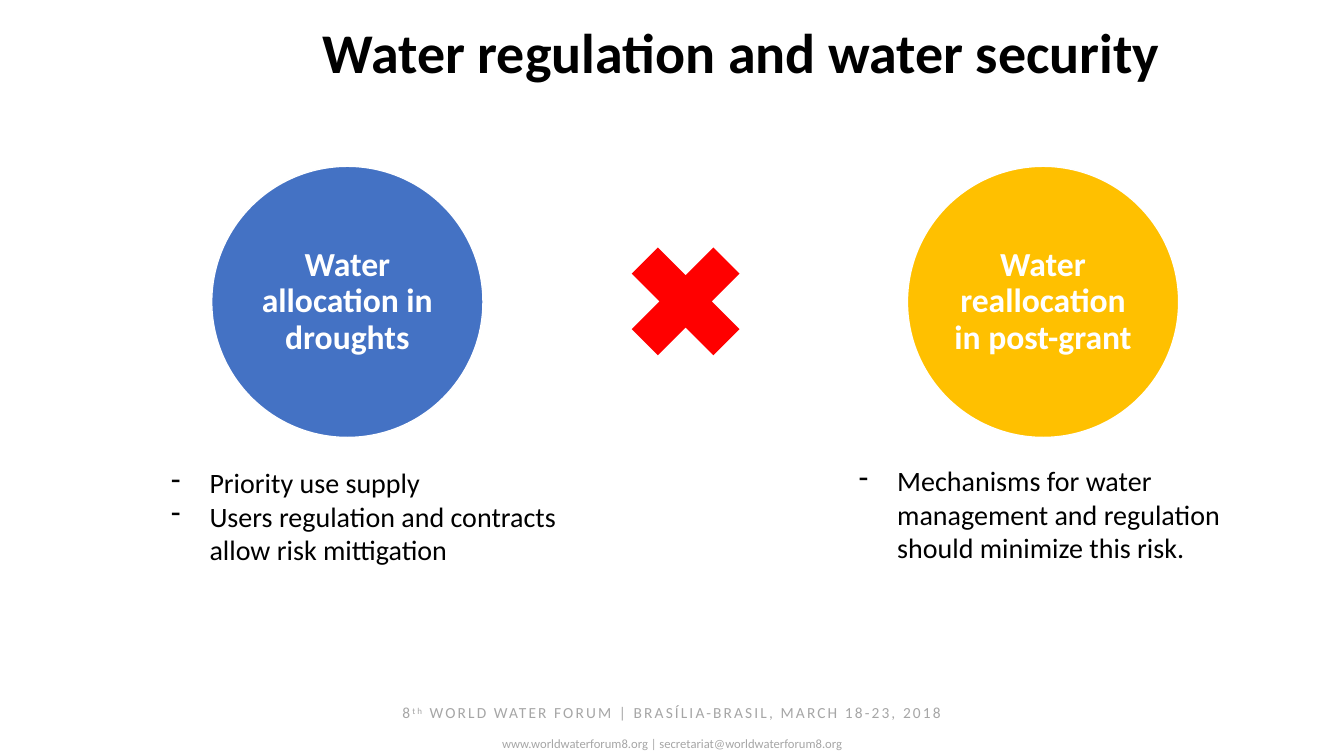
import pptx
import pptx.dml.color
import pptx.enum.shapes
import pptx.enum.text
import pptx.oxml
import pptx.oxml.ns
import pptx.util

EMU_PER_PX = 9144
FONT = "Calibri"
CENTER = pptx.enum.text.PP_ALIGN.CENTER
SHAPES = pptx.enum.shapes.MSO_SHAPE


def px(length):
    return pptx.util.Emu(length * EMU_PER_PX)


def color(hex_code):
    return pptx.dml.color.RGBColor.from_string(hex_code)


def style_runs(paragraph, size, hex_code, bold=False):
    for run in paragraph.runs:
        run.font.name = FONT
        run.font.size = pptx.util.Pt(size)
        run.font.bold = bold
        run.font.color.rgb = color(hex_code)


def add_text_frame(slide, left, top, width, height):
    frame = slide.shapes.add_textbox(px(left), px(top), px(width), px(height)).text_frame
    frame.word_wrap = True
    return frame


def add_filled_shape(slide, kind, left, top, size, fill):
    shape = slide.shapes.add_shape(kind, px(left), px(top), px(size), px(size))
    shape.shadow.inherit = False
    shape.fill.solid()
    shape.fill.fore_color.rgb = color(fill)
    return shape


def add_title(slide, text):
    frame = add_text_frame(slide, 160, 20, 1150, 145)
    frame.text = text
    heading = frame.paragraphs[0]
    heading.alignment = CENTER
    heading.line_spacing = 0.9
    style_runs(heading, 40, "000000", bold=True)


def add_topic_circle(slide, left, fill, text):
    circle = add_filled_shape(slide, SHAPES.OVAL, left, 165, 269, fill)
    circle.line.color.rgb = color("FFFFFF")
    circle.line.width = pptx.util.Pt(1)
    frame = circle.text_frame
    frame.word_wrap = True
    frame.vertical_anchor = pptx.enum.text.MSO_ANCHOR.MIDDLE
    frame.margin_left = frame.margin_right = px(3)
    frame.margin_top = frame.margin_bottom = px(3)
    frame.text = text
    label = frame.paragraphs[0]
    label.alignment = CENTER
    label.line_spacing = 0.9
    style_runs(label, 24, "FFFFFF", bold=True)


def add_cross(slide):
    cross = add_filled_shape(slide, SHAPES.MATH_PLUS, 602, 221, 156, "FF0000")
    cross.line.fill.background()
    cross.rotation = 45


def add_dash_list(slide, left, top, items):
    frame = add_text_frame(slide, left, top, 433, 111)
    frame.text = "\n".join(items)
    for item in frame.paragraphs:
        properties = item._p.get_or_add_pPr()
        properties.set("marL", str(px(38)))
        properties.set("indent", str(-px(38)))
        bullet = pptx.oxml.parse_xml(
            f'<a:buChar {pptx.oxml.ns.nsdecls("a")} char="-"/>')
        properties.append(bullet)
        style_runs(item, 20, "000000")


def add_footer(slide):
    frame = add_text_frame(slide, 0, 693, 1333, 57)
    event = frame.paragraphs[0]
    for text, baseline in (
        ("8", 0),
        ("th", 30000),
        (" WORLD WATER FORUM | BRASÍLIA-BRASIL, MARCH 18-23, 2018", 0),
    ):
        run = event.add_run()
        run.text = text
        properties = run._r.get_or_add_rPr()
        properties.set("spc", "150")
        properties.set("baseline", str(baseline))
    contact = frame.add_paragraph()
    contact.text = "www.worldwaterforum8.org | secretariat@worldwaterforum8.org"
    contact.space_before = pptx.util.Pt(10)
    for line, size in ((event, 11), (contact, 9)):
        line.alignment = CENTER
        style_runs(line, size, "A6A6A6")


def main():
    presentation = pptx.Presentation()
    presentation.slide_width = px(1333)
    presentation.slide_height = px(750)
    slide = presentation.slides.add_slide(presentation.slide_layouts[6])

    add_footer(slide)
    add_title(slide, "Water regulation and water security")
    add_topic_circle(slide, 210, "4472C4", "Water allocation in droughts")
    add_cross(slide)
    add_topic_circle(slide, 900, "FFC000", "Water reallocation in post-grant")
    add_dash_list(slide, 160, 457, [
        "Priority use supply",
        "Users regulation and contracts allow risk mittigation",
    ])
    add_dash_list(slide, 842, 455, [
        "Mechanisms for water management and regulation should minimize this risk.",
    ])
    presentation.save("out.pptx")


if __name__ == "__main__":
    main()
